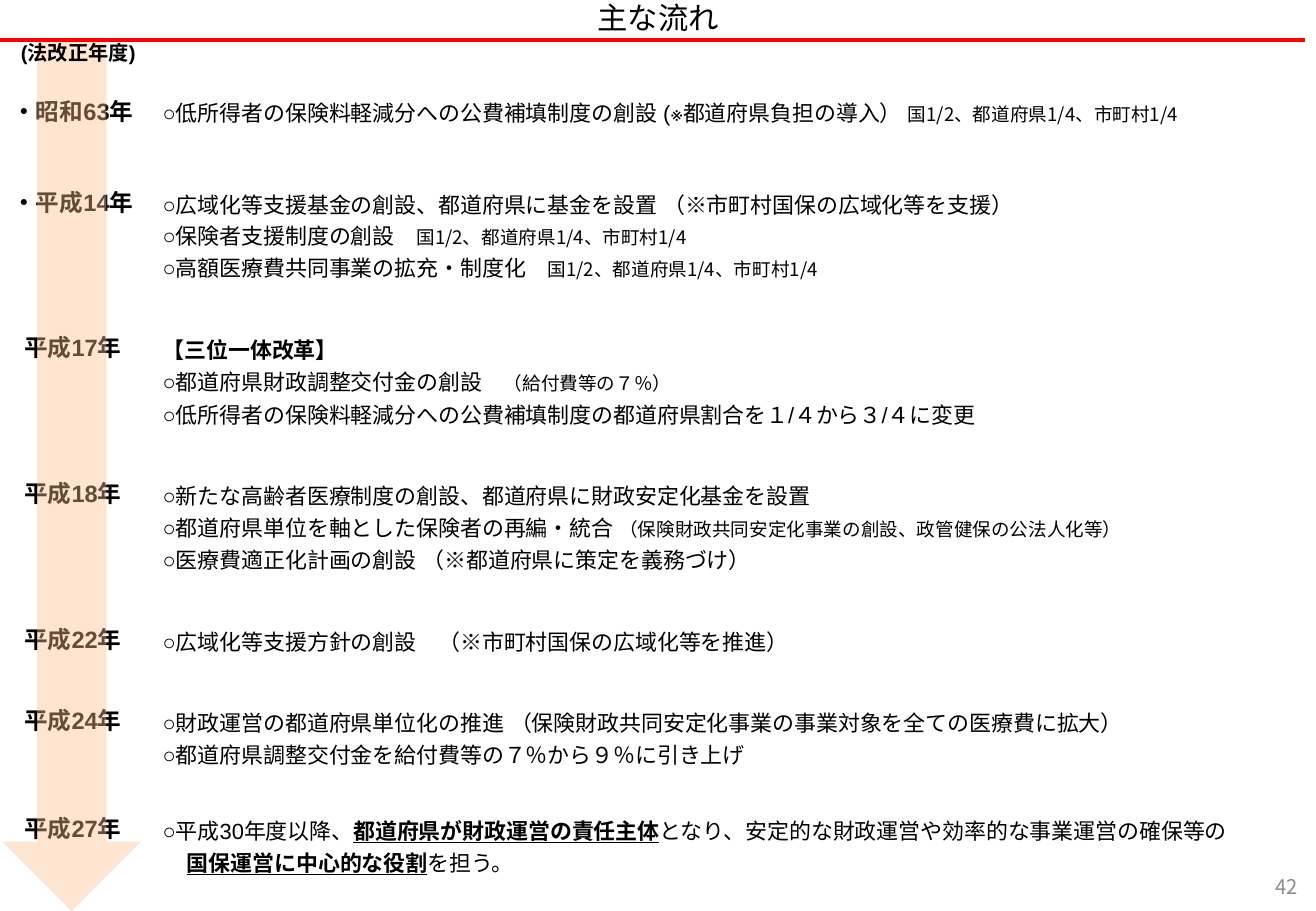
"""Build the slide that lists the main reforms by fiscal year beside a downward arrow."""
import pptx
import pptx.dml.color
import pptx.enum.shapes
import pptx.enum.text
import pptx.oxml
import pptx.oxml.ns
import pptx.util
import lxml.etree

Pt = pptx.util.Pt
ALIGN = pptx.enum.text.PP_ALIGN
SHAPE = pptx.enum.shapes.MSO_SHAPE
BLACK = pptx.dml.color.RGBColor(0x00, 0x00, 0x00)
WHITE = pptx.dml.color.RGBColor(0xFF, 0xFF, 0xFF)
RED = pptx.dml.color.RGBColor(0xFF, 0x00, 0x00)
PEACH = pptx.dml.color.RGBColor(0xFA, 0xC0, 0x90)
GREY = pptx.dml.color.RGBColor(0x8C, 0x8C, 0x8C)
SANS = "Noto Sans CJK JP"

FORMATS = {
    "title": {"size": Pt(18), "name": SANS},
    "heading": {"size": Pt(12), "name": "Arial", "bold": True},
    "number": {"size": Pt(12), "name": SANS},
    "year": {"size": Pt(14), "name": "Arial", "bold": True},
    "body": {"size": Pt(13), "name": "Arial", "bold": False},
    "note": {"size": Pt(11), "name": SANS, "bold": False},
    "reform": {"size": Pt(13), "name": "Arial", "bold": True},
    "key": {"size": Pt(13), "name": "Arial", "bold": True, "underline": True},
}
SHARES = ("国1/2、都道府県1/4、市町村1/4", "note")
REFORMS = [
    ("・昭和63年", 54, [
        [("○低所得者の保険料軽減分への公費補填制度の創設 (※都道府県負担の導入） ", "body"), SHARES],
    ]),
    ("・平成14年", 86.4, [
        [("○広域化等支援基金の創設、都道府県に基金を設置 （※市町村国保の広域化等を支援）", "body")],
        [("○保険者支援制度の創設　", "body"), SHARES],
        [("○高額医療費共同事業の拡充・制度化　", "body"), SHARES],
    ]),
    ("平成17年", 86.4, [
        [("【三位一体改革】", "reform")],
        [("○都道府県財政調整交付金の創設　", "body"), ("（給付費等の７％）", "note")],
        [("○低所得者の保険料軽減分への公費補填制度の都道府県割合を１/４から３/４に変更", "body")],
    ]),
    ("平成18年", 86.4, [
        [("○新たな高齢者医療制度の創設、都道府県に財政安定化基金を設置", "body")],
        [("○都道府県単位を軸とした保険者の再編・統合 ", "body"),
         ("（保険財政共同安定化事業の創設、政管健保の公法人化等）", "note")],
        [("○医療費適正化計画の創設 （※都道府県に策定を義務づけ）", "body")],
    ]),
    ("平成22年", 48.24, [
        [("○広域化等支援方針の創設　（※市町村国保の広域化等を推進）", "body")],
    ]),
    ("平成24年", 64.08, [
        [("○財政運営の都道府県単位化の推進 （保険財政共同安定化事業の事業対象を全ての医療費に拡大）", "body")],
        [("○都道府県調整交付金を給付費等の７％から９％に引き上げ", "body")],
    ]),
    ("平成27年", 62.64, [
        [("○平成30年度以降、", "body"), ("都道府県が財政運営の責任主体", "key"),
         ("となり、安定的な財政運営や効率的な事業運営の確保等の", "body")],
        [("国保運営に中心的な役割", "key"), ("を担う。", "body")],
    ]),
]


def write_line(para, pieces, align, spacing=None, color=BLACK):
    para.alignment = align
    para.line_spacing = spacing
    for text, style in pieces:
        span = para.add_run()
        span.text = text
        span.font.color.rgb = color
        for name, value in FORMATS[style].items():
            setattr(span.font, name, value)
        east_asian = lxml.etree.SubElement(span.font._element, pptx.oxml.ns.qn("a:ea"))
        east_asian.set("typeface", FORMATS[style]["name"])


deck = pptx.Presentation()
deck.slide_width, deck.slide_height = Pt(780), Pt(540)
page = deck.slides.add_slide(deck.slide_layouts[6])

table = page.shapes.add_table(len(REFORMS), 2, Pt(-2.16), Pt(52.56), Pt(780.48), Pt(488.16)).table
table.first_row = table.horz_banding = False
table.columns[0].width, table.columns[1].width = Pt(90.72), Pt(689.76)
for row, (year, height, lines) in enumerate(REFORMS):
    table.rows[row].height = Pt(height)
    year_cell, reform_cell = table.cell(row, 0), table.cell(row, 1)
    for cell in (year_cell, reform_cell):
        cell.fill.background()
        cell.margin_left = cell.margin_right = Pt(7.9)
        cell.margin_top = cell.margin_bottom = Pt(3.6)
    write_line(year_cell.text_frame.paragraphs[0], [(year, "year")], ALIGN.CENTER, Pt(18))
    for index, pieces in enumerate(lines):
        frame = reform_cell.text_frame
        para = frame.add_paragraph() if index else frame.paragraphs[0]
        write_line(para, pieces, ALIGN.LEFT, Pt(19))

for para, first_indent in zip(table.cell(6, 1).text_frame.paragraphs, (-14.4, 0)):
    properties = para._p.get_or_add_pPr()
    properties.set("marL", str(Pt(14.4)))
    properties.set("indent", str(Pt(first_indent)))

arrow = page.shapes.add_shape(SHAPE.DOWN_ARROW, Pt(1.44), Pt(19.44), Pt(82.08), Pt(520.56))
title = page.shapes.add_shape(SHAPE.RECTANGLE, Pt(0), Pt(-2.88), Pt(780), Pt(26.64))
for shape, color in ((arrow, PEACH), (title, WHITE)):
    shape.shadow.inherit = False
    shape.fill.solid()
    shape.fill.fore_color.rgb = color
    shape.line.fill.background()
arrow_color = arrow._element.spPr.find(".//" + pptx.oxml.ns.qn("a:srgbClr"))
lxml.etree.SubElement(arrow_color, pptx.oxml.ns.qn("a:alpha")).set("val", "40000")

heading = page.shapes.add_textbox(Pt(-0.72), Pt(18), Pt(94.32), Pt(26.64))
number = page.shapes.add_textbox(Pt(594), Pt(511.2), Pt(182.16), Pt(28.8))
for box, text, style, align, color in (
    (title, "主な流れ", "title", ALIGN.CENTER, BLACK),
    (heading, "(法改正年度)", "heading", ALIGN.CENTER, BLACK),
    (number, "42", "number", ALIGN.RIGHT, GREY),
):
    box.text_frame.word_wrap = True
    box.text_frame.vertical_anchor = pptx.enum.text.MSO_ANCHOR.MIDDLE
    write_line(box.text_frame.paragraphs[0], [(text, style)], align, color=color)

rule = page.shapes.add_connector(
    pptx.enum.shapes.MSO_CONNECTOR.STRAIGHT, Pt(-6.48), Pt(23.76), Pt(773.28), Pt(23.76))
rule.line.color.rgb = RED
rule.line.width = Pt(2.5)
lxml.etree.SubElement(rule._element.spPr, pptx.oxml.ns.qn("a:effectLst"))

deck.save("out.pptx")
